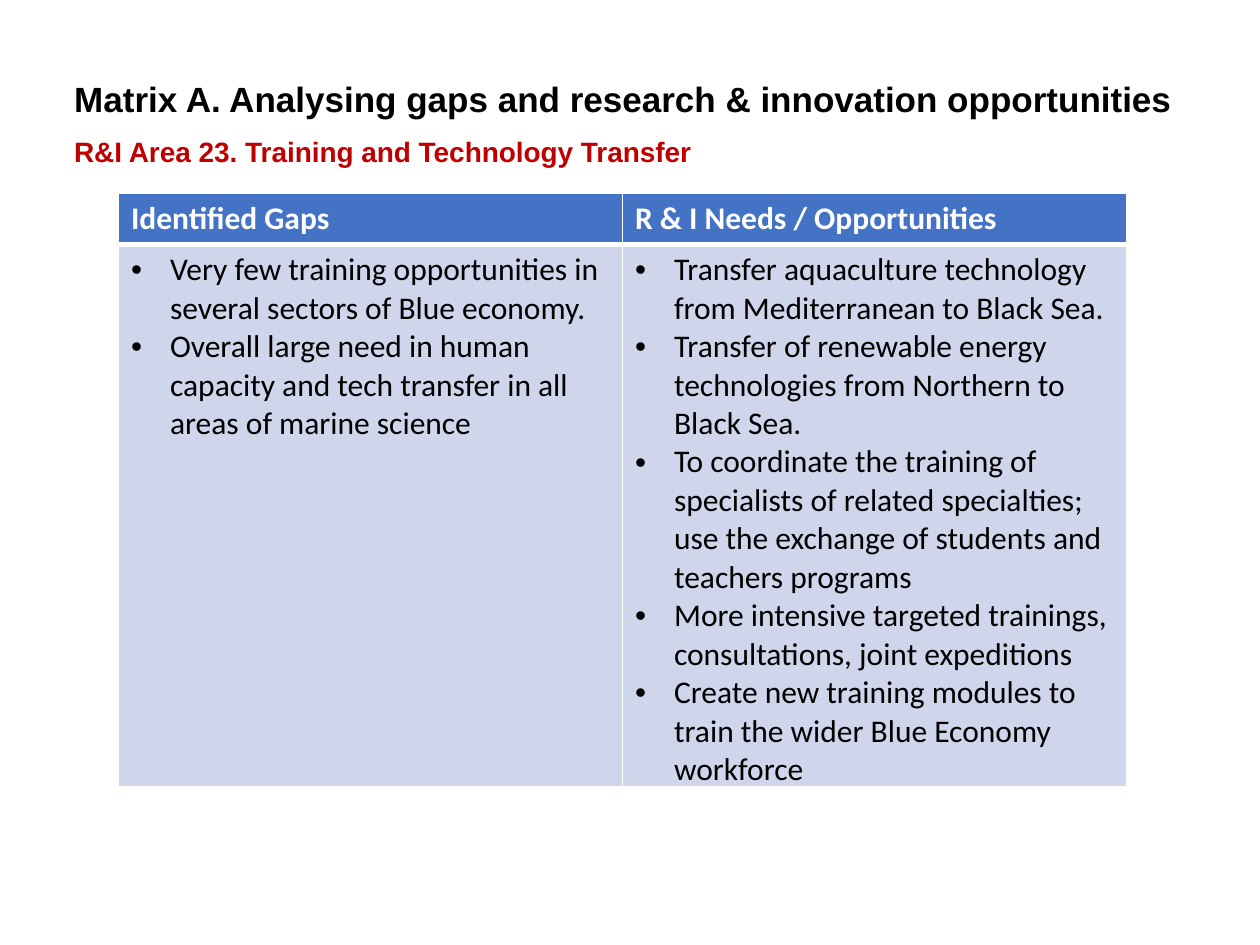
from dataclasses import dataclass

import pptx
import pptx.dml.color
import pptx.enum.text
import pptx.oxml
import pptx.oxml.ns
import pptx.util
from pptx.util import Inches


@dataclass(frozen=True)
class Theme:
    heading_font: str = "Arial"
    table_font: str = "Calibri"
    title_size: int = 20
    area_size: int = 16
    table_size: int = 18
    black: str = "000000"
    white: str = "FFFFFF"
    red: str = "C00000"
    header_fill: str = "4472C4"
    body_fill: str = "CFD5EA"
    thin: float = 1
    thick: float = 3


@dataclass(frozen=True)
class Heading:
    text: str
    box: tuple[float, float, float, float]
    size: int
    color: str
    anchor: pptx.enum.text.MSO_ANCHOR


@dataclass(frozen=True)
class Column:
    title: str
    items: tuple[str, ...]


THEME = Theme()
ANCHOR = pptx.enum.text.MSO_ANCHOR
HEADINGS = (
    Heading("Matrix A. Analysing gaps and research & innovation opportunities",
            (0.49, 0.49, 8.98, 0.59), THEME.title_size, THEME.black, ANCHOR.MIDDLE),
    Heading("R&I Area 23. Training and Technology Transfer",
            (0.49, 1.02, 7.73, 0.37), THEME.area_size, THEME.red, ANCHOR.TOP),
)
COLUMNS = (
    Column("Identified Gaps", (
        "Very few training opportunities in several sectors of Blue economy.",
        "Overall large need in human capacity and tech transfer in all areas of marine science",
    )),
    Column("R & I Needs / Opportunities", (
        "Transfer aquaculture technology from Mediterranean to Black Sea.",
        "Transfer of renewable energy technologies from Northern to Black Sea.",
        "To coordinate the training of specialists of related specialties; "
        "use the exchange of students and teachers programs",
        "More intensive targeted trainings, consultations, joint expeditions",
        "Create new training modules to train the wider Blue Economy workforce",
    )),
)
TABLE_BOX = (0.94, 1.53, 8, 4.71)
ROW_HEIGHT = 0.41
BULLET_INDENT = 0.31


def rgb(color: str) -> pptx.dml.color.RGBColor:
    return pptx.dml.color.RGBColor.from_string(color)


def add_run(p, text: str, font: str, size: int, color: str, bold: bool) -> None:
    r = p.add_run()
    r.text = text
    formats = {"name": font, "size": pptx.util.Pt(size), "bold": bold}
    for name, value in formats.items():
        setattr(r.font, name, value)
    r.font.color.rgb = rgb(color)


def add_heading(s, heading: Heading) -> None:
    tf = s.shapes.add_textbox(*map(Inches, heading.box)).text_frame
    tf.word_wrap = True
    tf.vertical_anchor = heading.anchor
    add_run(tf.paragraphs[0], heading.text, THEME.heading_font,
            heading.size, heading.color, True)


def add_bullet(p) -> None:
    pPr = p._p.get_or_add_pPr()
    indent = Inches(BULLET_INDENT)
    pPr.set("marL", str(indent))
    pPr.set("indent", str(-indent))
    ns = pptx.oxml.ns.nsdecls("a")
    for tag in ('buFont {} typeface="Arial"', 'buChar {} char="•"'):
        pPr.append(pptx.oxml.parse_xml(f"<a:{tag.format(ns)}/>"))


def style_cell(cell, fill: str, top: float, bottom: float) -> None:
    """Give the cell white borders, then its fill, in schema order."""
    tcPr = cell._tc.get_or_add_tcPr()
    ns = pptx.oxml.ns.nsdecls("a")
    widths = {"lnL": THEME.thin, "lnR": THEME.thin, "lnT": top, "lnB": bottom}
    for tag, width in widths.items():
        tcPr.append(pptx.oxml.parse_xml(
            f'<a:{tag} {ns} w="{pptx.util.Pt(width)}"><a:solidFill>'
            f'<a:srgbClr val="{THEME.white}"/></a:solidFill></a:{tag}>'))
    cell.fill.solid()
    cell.fill.fore_color.rgb = rgb(fill)


def add_matrix(s, columns: tuple[Column, ...]) -> None:
    frame = s.shapes.add_table(2, len(columns), *map(Inches, TABLE_BOX))
    table = frame.table
    for row in table.rows:
        row.height = Inches(ROW_HEIGHT)
    frame.height = Inches(TABLE_BOX[3])
    for i, column in enumerate(columns):
        header, body = table.cell(0, i), table.cell(1, i)
        style_cell(header, THEME.header_fill, THEME.thin, THEME.thick)
        style_cell(body, THEME.body_fill, THEME.thick, THEME.thin)
        add_run(header.text_frame.paragraphs[0], column.title,
                THEME.table_font, THEME.table_size, THEME.white, True)
        tf = body.text_frame
        for n, item in enumerate(column.items):
            p = tf.add_paragraph() if n else tf.paragraphs[0]
            add_bullet(p)
            add_run(p, item, THEME.table_font, THEME.table_size, THEME.black, False)


def main() -> None:
    prs = pptx.Presentation()
    prs.slide_width, prs.slide_height = Inches(10), Inches(7.5)
    s = prs.slides.add_slide(prs.slide_layouts[6])
    for heading in HEADINGS:
        add_heading(s, heading)
    add_matrix(s, COLUMNS)
    prs.save("out.pptx")


if __name__ == "__main__":
    main()
